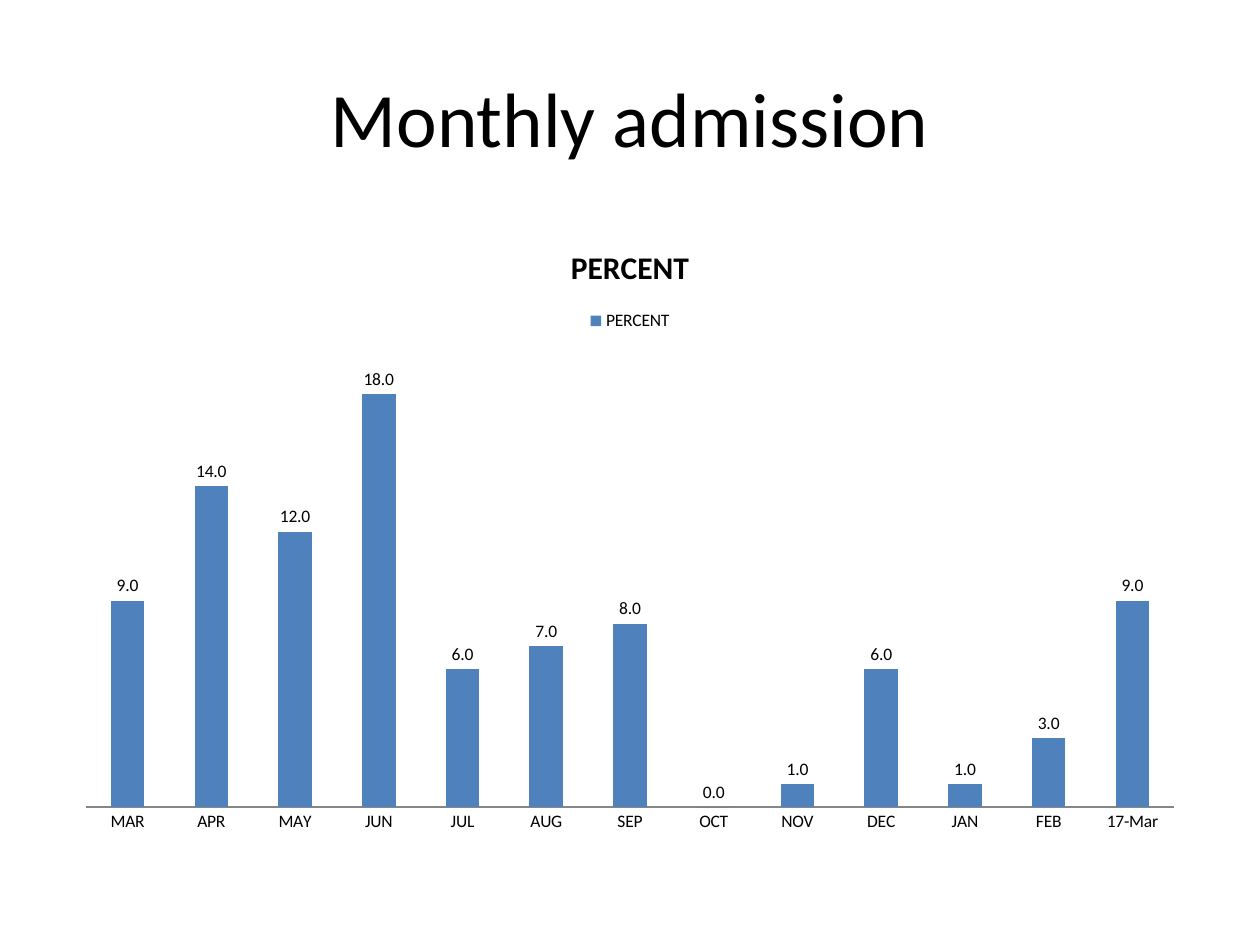
from pptx import Presentation
from pptx import util as u
from pptx.chart import data as cd
from pptx.dml import color as col
from pptx.enum import chart as ch, text as tx

HUES = {"ink": "000000", "bar": "4F81BD", "axis": "868686"}
FONT = "Calibri"
FORM = "###0.0"
RATES = {
    "MAR": 9, "APR": 14, "MAY": 12, "JUN": 18, "JUL": 6, "AUG": 7, "SEP": 8,
    "OCT": 0, "NOV": 1, "DEC": 6, "JAN": 1, "FEB": 3, "17-Mar": 9,
}


def style(font, size, bold=False):
    font.name = FONT
    font.size = u.Pt(size)
    font.bold = bold
    font.color.rgb = col.RGBColor.from_string(HUES["ink"])


deck = Presentation()
deck.slide_width, deck.slide_height = u.Cm(25.4), u.Cm(19.05)
slide = deck.slides.add_slide(deck.slide_layouts[6])
left, width = u.Cm(1.27), u.Cm(22.86)

# Heading
box = slide.shapes.add_textbox(left, u.Cm(0.76), width, u.Cm(3.18))
frame = box.text_frame
frame.word_wrap = True
frame.vertical_anchor = tx.MSO_ANCHOR.MIDDLE
para = frame.paragraphs[0]
para.alignment = tx.PP_ALIGN.CENTER
run = para.add_run()
run.text = "Monthly admission"
style(run.font, 44)

# Column chart
data = cd.CategoryChartData(number_format=FORM)
data.categories = list(RATES)
data.add_series("PERCENT", list(RATES.values()))
chart = slide.shapes.add_chart(
    ch.XL_CHART_TYPE.COLUMN_CLUSTERED,
    left, u.Cm(4.45), width, u.Cm(12.57), data).chart
style(chart.font, 10)

# Chart title and legend
chart.has_title = True
run = chart.chart_title.text_frame.paragraphs[0].add_run()
run.text = "PERCENT"
style(run.font, 18, True)
chart.chart_title.include_in_layout = False
chart.has_legend = True
chart.legend.position = ch.XL_LEGEND_POSITION.TOP
chart.legend.include_in_layout = False

# Axes
months = chart.category_axis
months.major_tick_mark = ch.XL_TICK_MARK.NONE
months.format.line.color.rgb = col.RGBColor.from_string(HUES["axis"])
rate = chart.value_axis
rate.visible = False
rate.has_major_gridlines = False
rate.minimum_scale, rate.maximum_scale = 0, 20
rate.tick_labels.number_format = FORM
rate.tick_labels.number_format_is_linked = False

# Bars and value labels
plot = chart.plots[0]
plot.gap_width = 150
plot.vary_by_categories = False
fill = plot.series[0].format.fill
fill.solid()
fill.fore_color.rgb = col.RGBColor.from_string(HUES["bar"])
plot.has_data_labels = True
marks = plot.data_labels
marks.show_value = True
marks.number_format = FORM
marks.number_format_is_linked = False
marks.position = ch.XL_LABEL_POSITION.OUTSIDE_END
style(marks.font, 10)

deck.save("out.pptx")
